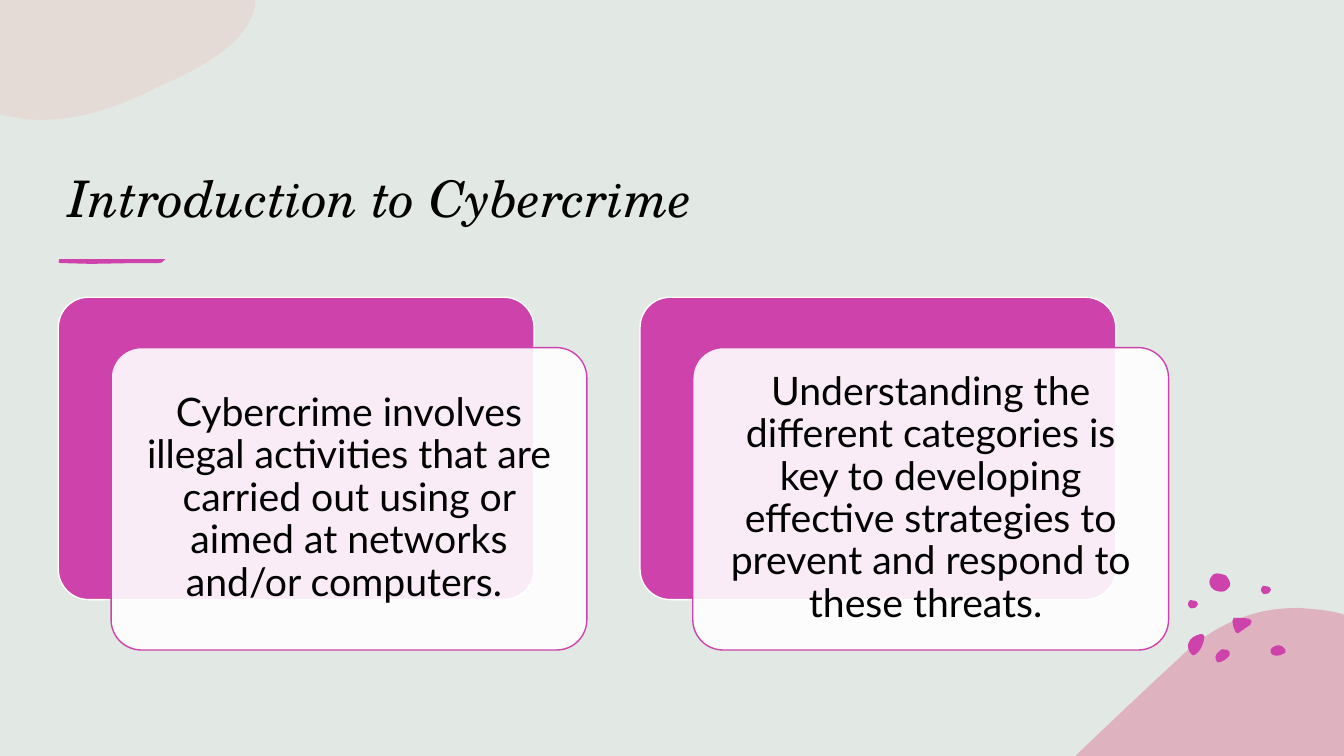
from lxml.etree import SubElement
from pptx import Presentation
from pptx.dml.color import RGBColor
from pptx.enum.shapes import MSO_SHAPE
from pptx.enum.text import MSO_ANCHOR, PP_ALIGN
from pptx.oxml.ns import qn
from pptx.util import Cm, Pt

MAGENTA = "CD43AB"
WHITE = "FFFFFF"
BLACK = "000000"
SAGE = "E2E8E3"
PAGE_WIDTH, PAGE_HEIGHT = Cm(33.87), Cm(19.05)

CORNER_BLOB = [
    (0, 0), (6.43, 0), (6.43, 0.15), (6.22, 1.12, 5.08, 1.7, 4.01, 2.18),
    (3.12, 2.62, 2.18, 3.02, 1.04, 3.02), (0.79, 3.02, 0.56, 3, 0.33, 2.95), (0, 2.9),
]
HILL = [
    (32.72, 15.32), (33.05, 15.34, 33.38, 15.37, 33.71, 15.44), (33.87, 15.49),
    (33.87, 19.05), (27.1, 19.05), (27.13, 19.02),
    (27.99, 18.2, 28.86, 17.37, 29.69, 16.61), (30.25, 16.05, 30.83, 15.72, 31.42, 15.52),
    (31.85, 15.37, 32.28, 15.32, 32.72, 15.32),
]
TITLE_STROKE = [
    (1.5, 6.53), (4.17, 6.53), (4.09, 6.55, 4.14, 6.63, 3.99, 6.63),
    (3.38, 6.63), (2.29, 6.65), (1.55, 6.63), (1.45, 6.65, 1.47, 6.55, 1.5, 6.53),
]
PEBBLE = [
    (31.78, 14.88), (31.78, 14.88, 31.78, 14.78, 31.83, 14.76),
    (31.88, 14.76, 31.9, 14.76, 31.95, 14.78), (31.98, 14.78, 32.03, 14.81, 32.03, 14.86),
    (32.03, 14.88, 32, 14.91, 31.98, 14.94), (31.98, 14.94, 31.98, 14.96, 31.93, 14.96),
    (31.9, 14.96, 31.85, 14.99, 31.83, 14.96), (31.8, 14.91, 31.78, 14.91, 31.78, 14.88),
]
SPOTS = [
    [(30.81, 16.36), (30.86, 16.36, 30.89, 16.36, 30.94, 16.38),
     (30.99, 16.41, 31.01, 16.46, 30.99, 16.51), (30.94, 16.59, 30.78, 16.71, 30.68, 16.69),
     (30.66, 16.66, 30.63, 16.61, 30.63, 16.56), (30.63, 16.51, 30.68, 16.43, 30.73, 16.41),
     (30.76, 16.38, 30.78, 16.36, 30.81, 16.36)],
    [(30.25, 15.98), (30.3, 15.98, 30.35, 15.98, 30.35, 16.03),
     (30.35, 16.05, 30.35, 16.05, 30.35, 16.08),
     (30.33, 16.21, 30.28, 16.33, 30.2, 16.43), (30.15, 16.48, 30.07, 16.56, 30.02, 16.48),
     (29.95, 16.41, 29.92, 16.28, 29.95, 16.21), (29.97, 16.13, 30.02, 16.1, 30.07, 16.05),
     (30.1, 16.05, 30.18, 15.98, 30.25, 15.98)],
    [(32.23, 16.26), (32.28, 16.26, 32.36, 16.31, 32.39, 16.36),
     (32.41, 16.41, 32.41, 16.46, 32.33, 16.48), (32.26, 16.54, 32.05, 16.54, 32.03, 16.46),
     (32, 16.41, 32.03, 16.36, 32.05, 16.33), (32.11, 16.28, 32.16, 16.26, 32.23, 16.26)],
    [(30.51, 14.76), (30.48, 14.76, 30.45, 14.6, 30.53, 14.53),
     (30.58, 14.48, 30.58, 14.45, 30.66, 14.45), (30.73, 14.45, 30.84, 14.48, 30.89, 14.5),
     (30.94, 14.55, 31.04, 14.68, 30.99, 14.78), (30.91, 14.86, 30.89, 14.91, 30.78, 14.91),
     (30.71, 14.91, 30.58, 14.88, 30.56, 14.83), (30.51, 14.81, 30.51, 14.78, 30.51, 14.76)],
    [(31.19, 15.57), (31.34, 15.57, 31.62, 15.57, 31.52, 15.72),
     (31.52, 15.75, 31.5, 15.77, 31.47, 15.77), (31.39, 15.82, 31.32, 15.88, 31.24, 15.93),
     (31.22, 15.95, 31.19, 15.98, 31.17, 15.95), (31.17, 15.95, 31.14, 15.93, 31.14, 15.93),
     (31.09, 15.82, 31.06, 15.75, 31.06, 15.65), (31.06, 15.62, 31.06, 15.6, 31.09, 15.57)],
]
CARD_TEXTS = [
    "Cybercrime involves illegal activities that are carried out using or aimed at "
    "networks and/or computers. ",
    "Understanding the different categories is key to developing effective strategies "
    "to prevent and respond to these threats. ",
]


def paint(fill, color, opacity=100):
    fill.solid()
    fill.fore_color.rgb = RGBColor.from_string(color)
    if opacity < 100:
        tint = fill._xPr.find(qn("a:solidFill"))[0]
        SubElement(tint, qn("a:alpha")).set("val", str(opacity * 1000))


def write(frame, text, font, size, italic=False, align=PP_ALIGN.LEFT,
          anchor=MSO_ANCHOR.MIDDLE):
    frame.word_wrap = True
    frame.vertical_anchor = anchor
    para = frame.paragraphs[0]
    para.alignment = align
    para.line_spacing = 0.9
    span = para.add_run()
    span.text = text
    span.font.name = font
    span.font.size = Pt(size)
    span.font.italic = italic
    paint(span.font.fill, BLACK)


def bend(segment, step, left, top):
    for child in list(segment):
        segment.remove(child)
    segment.tag = qn("a:cubicBezTo")
    for x, y in zip(step[::2], step[1::2]):
        point = SubElement(segment, qn("a:pt"))
        point.set("x", str(Cm(x) - left))
        point.set("y", str(Cm(y) - top))


def add_outline(page, outline, color, opacity=100, shift=(0, 0)):
    corners = [(Cm(step[-2]), Cm(step[-1])) for step in outline]
    builder = page.shapes.build_freeform(*corners[0])
    builder.add_line_segments(corners[1:], close=True)
    shape = builder.convert_to_shape()
    segments = list(shape._element.iter(qn("a:lnTo")))
    for segment, step in zip(segments, outline[1:]):
        if len(step) == 6:
            bend(segment, step, shape.left, shape.top)
    shape.left += Cm(shift[0])
    shape.top += Cm(shift[1])
    shape.shadow.inherit = False
    paint(shape.fill, color, opacity)
    shape.line.fill.background()


def add_backdrop(page):
    backdrop = page.shapes.add_shape(MSO_SHAPE.RECTANGLE, 0, 0, PAGE_WIDTH, PAGE_HEIGHT)
    backdrop.shadow.inherit = False
    paint(backdrop.fill, SAGE)
    backdrop.line.fill.background()
    page.shapes._spTree.insert(2, backdrop._element)


def add_panel(page, left, top, color, line_color, opacity=100):
    panel = page.shapes.add_shape(
        MSO_SHAPE.ROUNDED_RECTANGLE, Cm(left), Cm(top), Cm(11.99), Cm(7.62))
    panel.adjustments[0] = 0.1
    panel.shadow.inherit = False
    paint(panel.fill, color, opacity)
    paint(panel.line.fill, line_color)
    panel.line.width = Pt(1)


def add_card(page, left, text):
    top = 7.49
    add_panel(page, left, top, MAGENTA, WHITE)
    add_panel(page, left + 1.33, top + 1.27, WHITE, MAGENTA, opacity=90)
    box = page.shapes.add_textbox(Cm(left + 1.55), Cm(top + 1.49), Cm(11.55), Cm(7.17))
    frame = box.text_frame
    frame.margin_left = frame.margin_right = Cm(0.3)
    frame.margin_top = frame.margin_bottom = Cm(0.3)
    write(frame, text, "Lato", 28, align=PP_ALIGN.CENTER)


def add_title(page, text):
    title = page.shapes.title
    title.left, title.top, title.width, title.height = Cm(1.46), Cm(2.2), Cm(27.99), Cm(3.68)
    write(title.text_frame, text, "TeX Gyre Schola", 36, italic=True,
          anchor=MSO_ANCHOR.BOTTOM)


def main():
    deck = Presentation()
    deck.slide_width, deck.slide_height = PAGE_WIDTH, PAGE_HEIGHT
    page = deck.slides.add_slide(deck.slide_layouts[5])
    paint(page.background.fill, SAGE)

    add_backdrop(page)
    add_outline(page, CORNER_BLOB, "EBB8B4", opacity=25)
    add_title(page, "Introduction to Cybercrime")
    add_outline(page, TITLE_STROKE, MAGENTA)
    add_outline(page, HILL, "DD7D9D", opacity=50)
    for spot in SPOTS:
        add_outline(page, spot, MAGENTA)
    for shift in [(0, 0), (-1.84, 0.36)]:
        add_outline(page, PEBBLE, MAGENTA, shift=shift)
    for index, text in enumerate(CARD_TEXTS):
        add_card(page, 1.47 + index * 14.66, text)

    deck.save("out.pptx")


if __name__ == "__main__":
    main()
